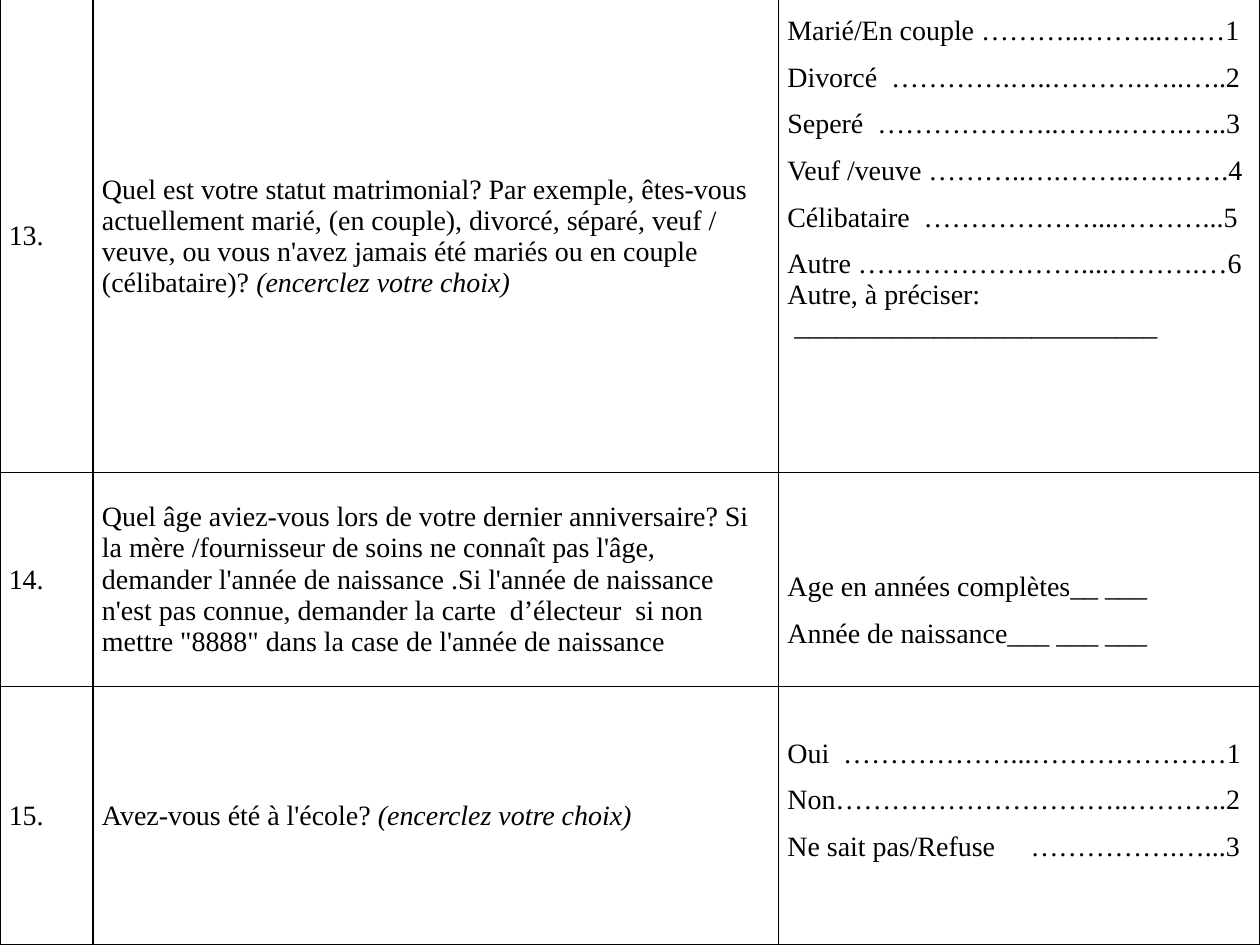
import pptx
import pptx.util
import pptx.dml.color
import pptx.enum.text
import pptx.oxml
import pptx.oxml.ns

Inches = pptx.util.Inches
Pt = pptx.util.Pt
RGBColor = pptx.dml.color.RGBColor
ANCHOR = pptx.enum.text.MSO_ANCHOR

BLACK = RGBColor(0x00, 0x00, 0x00)
WHITE = RGBColor(0xFF, 0xFF, 0xFF)
BLUE = RGBColor(0x0F, 0x56, 0xDC)
FONT = "Times New Roman"
FONT_SIZE = 16
SPACED = 1.5
TAB_POSITION = 1.93
LINE_HEIGHT = 0.37

COLUMN_WIDTHS = [0.74, 5.44, 3.82]
CHOICE_HINT = "(encerclez votre choix)"

QUESTIONS = [
    {
        "number": "13.",
        "height": 3.75,
        "question": "Quel est votre statut matrimonial? Par exemple, êtes-vous "
                    "actuellement marié, (en couple), divorcé, séparé, veuf / "
                    "veuve, ou vous n'avez jamais été mariés ou en couple "
                    "(célibataire)? ",
        "hint": CHOICE_HINT,
        "answers": [
            "Marié/En couple ………...……...….…1",
            "Divorcé  ………….…..……….…..…..2",
            "Seperé  ………………..…….…….…..3",
            "Veuf /veuve ………..….……..….…….4",
            "Célibataire  ………………....………...5",
            "Autre ……………………....……….…6",
        ],
        "details": ["Autre, à préciser:", " __________________________"],
        "anchor": ANCHOR.TOP,
        "margins": (0, 0),
    },
    {
        "number": "14.",
        "height": 1.7,
        "question": "Quel âge aviez-vous lors de votre dernier anniversaire? Si "
                    "la mère /fournisseur de soins ne connaît pas l'âge, "
                    "demander l'année de naissance .Si l'année de "
                    "naissance n'est pas connue, demander la carte  d’électeur  si "
                    "non mettre \"8888\" dans la case de l'année de naissance",
        "hint": "",
        "answers": [
            "Age en années complètes__ ___",
            "Année de naissance___ ___ ___",
        ],
        "details": [],
        "anchor": ANCHOR.MIDDLE,
        "margins": (LINE_HEIGHT, 0),
    },
    {
        "number": "15.",
        "height": 2.05,
        "question": "Avez-vous été à l'école? ",
        "hint": CHOICE_HINT,
        "answers": [
            "Oui  ………………...…………………1",
            "Non…………………………..………..2",
            "Ne sait pas/Refuse\t…………….…...3",
        ],
        "details": [],
        "anchor": ANCHOR.MIDDLE,
        "margins": (0, LINE_HEIGHT),
    },
]


def add_border(cell, side):
    line = pptx.oxml.parse_xml(
        f'<a:{side} {pptx.oxml.ns.nsdecls("a")} w="{Pt(1)}">'
        f'<a:solidFill><a:srgbClr val="{BLACK}"/></a:solidFill></a:{side}>'
    )
    cell._tc.get_or_add_tcPr().append(line)


def add_tab_stop(p):
    tabs = pptx.oxml.parse_xml(
        f'<a:tabLst {pptx.oxml.ns.nsdecls("a")}>'
        f'<a:tab pos="{Inches(TAB_POSITION)}" algn="l"/></a:tabLst>'
    )
    p._p.get_or_add_pPr().append(tabs)


def format_run(r, italic=False):
    r.font.name = FONT
    r.font.size = Pt(FONT_SIZE)
    r.font.color.rgb = BLACK
    r.font.italic = italic


def format_cell(cell, first_row, anchor=ANCHOR.MIDDLE, margins=(0, 0)):
    cell.vertical_anchor = anchor
    cell.margin_left = cell.margin_right = Inches(0.07)
    cell.margin_top, cell.margin_bottom = map(Inches, margins)
    for side in ["lnL", "lnR"] + ([] if first_row else ["lnT"]) + ["lnB"]:
        add_border(cell, side)
    cell.fill.solid()
    cell.fill.fore_color.rgb = WHITE


def write_paragraphs(tf, lines):
    tf.text = "\n".join(text for text, spacing in lines)
    for p, (text, spacing) in zip(tf.paragraphs, lines):
        if "\t" in text:
            add_tab_stop(p)
        p.line_spacing = spacing
        for r in p.runs:
            format_run(r)


def main():
    prs = pptx.Presentation()
    prs.slide_width, prs.slide_height = Inches(10), Inches(7.5)
    s = prs.slides.add_slide(prs.slide_layouts[6])
    s.background.fill.solid()
    s.background.fill.fore_color.rgb = BLUE

    table = s.shapes.add_table(
        len(QUESTIONS), len(COLUMN_WIDTHS), 0, 0, prs.slide_width, prs.slide_height
    ).table
    table.first_row = table.horz_banding = False
    for column, width in zip(table.columns, COLUMN_WIDTHS):
        column.width = Inches(width)

    for i, item in enumerate(QUESTIONS):
        table.rows[i].height = Inches(item["height"])
        number, question, answers = table.rows[i].cells
        format_cell(number, i == 0)
        format_cell(question, i == 0)
        format_cell(answers, i == 0, item["anchor"], item["margins"])

        write_paragraphs(number.text_frame, [(item["number"], 1.0)])
        write_paragraphs(question.text_frame, [(item["question"], 1.0)])
        if item["hint"]:
            r = question.text_frame.paragraphs[0].add_run()
            r.text = item["hint"]
            format_run(r, italic=True)
        write_paragraphs(
            answers.text_frame,
            [(text, SPACED) for text in item["answers"]]
            + [(text, 1.0) for text in item["details"]],
        )

    prs.save("out.pptx")


if __name__ == "__main__":
    main()
